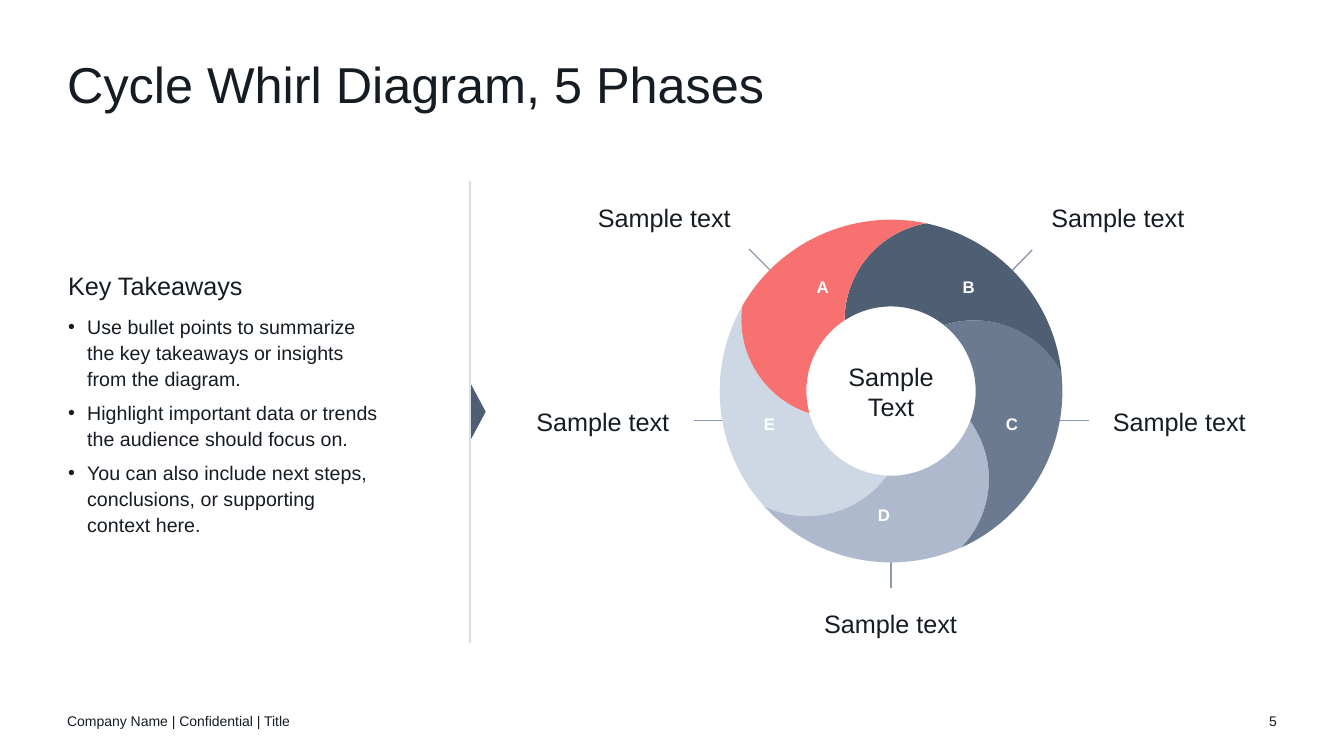
import math
from pptx import Presentation, util as u
from pptx.dml.color import RGBColor
from pptx.enum import shapes, text
from pptx.oxml.ns import qn
from lxml import etree

COLUMNS, ROWS, PHASES = 80, 45, 5
HUB = (53.04, 23.28)
OUTER_RADIUS, INNER_RADIUS = 10.2, 5.04
SWIRL_CENTRE, SWIRL_RADIUS = (3.12, -4.2), 5.88
SWIRL_START, SWIRL_END = -100.1, -179.9
OUTER_START, INNER_START = -78.2, -123.3
PHASE_ANGLE = 360 / PHASES


def colour(value):
    return RGBColor.from_string(value)


def write(paragraph, words, size=18, ink="151C23", bold=False, align="LEFT",
          spacing=None, before=0, after=0, bullet=None, indent=0.19):
    paragraph.alignment = getattr(text.PP_ALIGN, align)
    paragraph.space_before, paragraph.space_after = u.Pt(before), u.Pt(after)
    if spacing:
        paragraph.line_spacing = spacing
    run = paragraph.add_run()
    run.text = words
    run.font.name, run.font.size, run.font.bold = "Arial", u.Pt(size), bold
    run.font.color.rgb = colour(ink)
    if bullet:
        properties = paragraph._p.get_or_add_pPr()
        properties.set("marL", str(u.Inches(indent)))
        properties.set("indent", str(-u.Inches(indent)))
        etree.SubElement(properties, qn("a:buFont")).set("typeface", "Arial")
        etree.SubElement(properties, qn("a:buChar")).set("char", bullet)


def polar(centre, radius, degrees):
    angle = math.radians(degrees)
    return centre[0] + radius * math.cos(angle), centre[1] + radius * math.sin(angle)


def arc_samples(centre, radius, start, end, steps=24):
    return [polar(centre, radius, start + (end - start) * step / steps)
            for step in range(steps + 1)]


def arc_curve(centre, radius, start, end):
    handle = radius * 4 / 3 * math.tan(math.radians(end - start) / 4)
    first, last = polar(centre, radius, start), polar(centre, radius, end)
    return [polar(first, handle, start + 90), polar(last, -handle, end + 90), last]


def blade_arcs(position):
    turn, following = position * PHASE_ANGLE, (position + 1) * PHASE_ANGLE
    reach = math.hypot(*SWIRL_CENTRE)
    bearing = math.degrees(math.atan2(SWIRL_CENTRE[1], SWIRL_CENTRE[0]))
    near, far = (polar(HUB, reach, bearing + angle) for angle in (turn, following))
    return [
        (near, SWIRL_RADIUS, SWIRL_START + turn, SWIRL_END + turn),
        (HUB, INNER_RADIUS, INNER_START + turn, INNER_START + following),
        (far, SWIRL_RADIUS, SWIRL_END + following, SWIRL_START + following),
        (HUB, OUTER_RADIUS, OUTER_START + following, OUTER_START + turn),
    ]


class Deck:
    def __init__(self):
        self.presentation = Presentation()
        self.presentation.slide_width = u.Inches(40 / 3)
        self.presentation.slide_height = u.Inches(7.5)
        self.slide = self.presentation.slides.add_slide(self.presentation.slide_layouts[6])

    def place(self, column, row):
        return (round(column * self.presentation.slide_width / COLUMNS),
                round(row * self.presentation.slide_height / ROWS))

    def textbox(self, box, *paragraphs, anchor="MIDDLE"):
        shape = self.slide.shapes.add_textbox(*self.place(*box[:2]), *self.place(*box[2:]))
        frame = shape.text_frame
        frame.word_wrap = True
        frame.vertical_anchor = getattr(text.MSO_ANCHOR, anchor)
        frame.margin_left = frame.margin_right = frame.margin_top = frame.margin_bottom = 0
        for index, (words, style) in enumerate(paragraphs):
            paragraph = frame.add_paragraph() if index else frame.paragraphs[0]
            write(paragraph, words, **style)

    def line(self, start, end, ink):
        connector = self.slide.shapes.add_connector(
            shapes.MSO_CONNECTOR.STRAIGHT, *self.place(*start), *self.place(*end))
        connector.line.color.rgb = colour(ink)
        connector.line.width = u.Pt(1)
        etree.SubElement(connector._element.spPr, qn("a:effectLst"))

    def paint(self, shape, fill):
        shape.shadow.inherit = False
        shape.fill.solid()
        shape.fill.fore_color.rgb = colour(fill)
        shape.line.fill.background()

    def curved_outline(self, arcs, fill):
        samples = [self.place(*point) for arc in arcs for point in arc_samples(*arc)]
        left, top = (min(values) for values in zip(*samples))
        right, bottom = (max(values) for values in zip(*samples))
        builder = self.slide.shapes.build_freeform(left, top)
        builder.add_line_segments([(right, top), (right, bottom)], close=True)
        shape = builder.convert_to_shape()
        outline = shape._element.find(".//" + qn("a:path"))
        for step in list(outline):
            outline.remove(step)

        def add_step(tag, points):
            step = etree.SubElement(outline, qn(tag))
            for column, row in points:
                x, y = self.place(column, row)
                point = etree.SubElement(step, qn("a:pt"))
                point.set("x", str(x - left))
                point.set("y", str(y - top))

        curves = [arc_curve(*arc) for arc in arcs]
        add_step("a:moveTo", [curves[-1][-1]])
        for curve in curves:
            add_step("a:cubicBezTo", curve)
        add_step("a:close", [])
        self.paint(shape, fill)

    def triangle(self, box, fill, rotation):
        shape = self.slide.shapes.add_shape(
            shapes.MSO_SHAPE.ISOSCELES_TRIANGLE, *self.place(*box[:2]), *self.place(*box[2:]))
        shape.rotation = rotation
        self.paint(shape, fill)


SPOKES = [
    ((41.34, 25.02), (45.54, 25.02)),
    ((53.04, 34.98), (53.04, 32.1)),
    ((60.6, 25.02), (64.8, 25.02)),
    ((61.44, 14.88), (58.68, 17.7)),
    ((44.58, 14.82), (47.4, 17.64)),
]
BLADES = [
    ("E", "CED8E4", 3, (44.9, 24.33)),
    ("D", "AFB9CD", 2, (51.72, 29.73)),
    ("C", "6B7A90", 1, (59.34, 24.33)),
    ("B", "4E5E73", 0, (56.76, 16.2)),
    ("A", "F87171", -1, (48.08, 16.2)),
]
LABELS = [
    ((30.24, 24.18, 9.6, 1.8), "RIGHT", "MIDDLE"),
    ((47.46, 36.2, 11.1, 1.8), "CENTER", "TOP"),
    ((66.24, 24.18, 9.6, 1.8), "LEFT", "MIDDLE"),
    ((62.58, 12.06, 11.1, 1.8), "LEFT", "BOTTOM"),
    ((32.4, 12.06, 11.1, 1.8), "RIGHT", "BOTTOM"),
]
TAKEAWAYS = [
    "Use bullet points to summarize the key takeaways or insights from the diagram.",
    "Highlight important data or trends the audience should focus on.",
    "You can also include next steps, conclusions, or supporting context here.",
]


def main():
    deck = Deck()
    deck.textbox((73, 41.7, 3, 2.4), ("5", dict(size=10, align="RIGHT")))
    deck.textbox((4, 41.7, 27, 2.4), ("Company Name | Confidential | Title", dict(size=10)))

    for start, end in SPOKES:
        deck.line(start, end, "8C9AB0")
    for letter, fill, position, corner in BLADES:
        deck.curved_outline(blade_arcs(position), fill)
    for letter, fill, position, corner in BLADES:
        deck.textbox((*corner, 1.8, 1.8),
                     (letter, dict(size=12, ink="FFFFFF", bold=True, align="CENTER")))
    for box, align, anchor in LABELS:
        deck.textbox(box, ("Sample text", dict(align=align)), anchor=anchor)
    deck.textbox((49.44, 19.68, 7.2, 7.2), ("Sample Text", dict(align="CENTER")))

    deck.triangle((26.78, 24.06, 3.36, 0.9), "4E5E73", 90)
    deck.line((27.98, 10.8), (27.98, 38.28), "D9DEE5")
    body = dict(size=14, spacing=1.1, before=6, bullet="•")
    deck.textbox((4.05, 12.3, 18.6, 23.22),
                 ("Key Takeaways", dict(spacing=1.1, before=6, after=3)),
                 *((words, body) for words in TAKEAWAYS))
    deck.textbox((4, 3.6, 72, 3.6),
                 ("Cycle Whirl Diagram, 5 Phases", dict(size=36, spacing=0.9)), anchor="TOP")
    deck.presentation.save("out.pptx")


if __name__ == "__main__":
    main()
